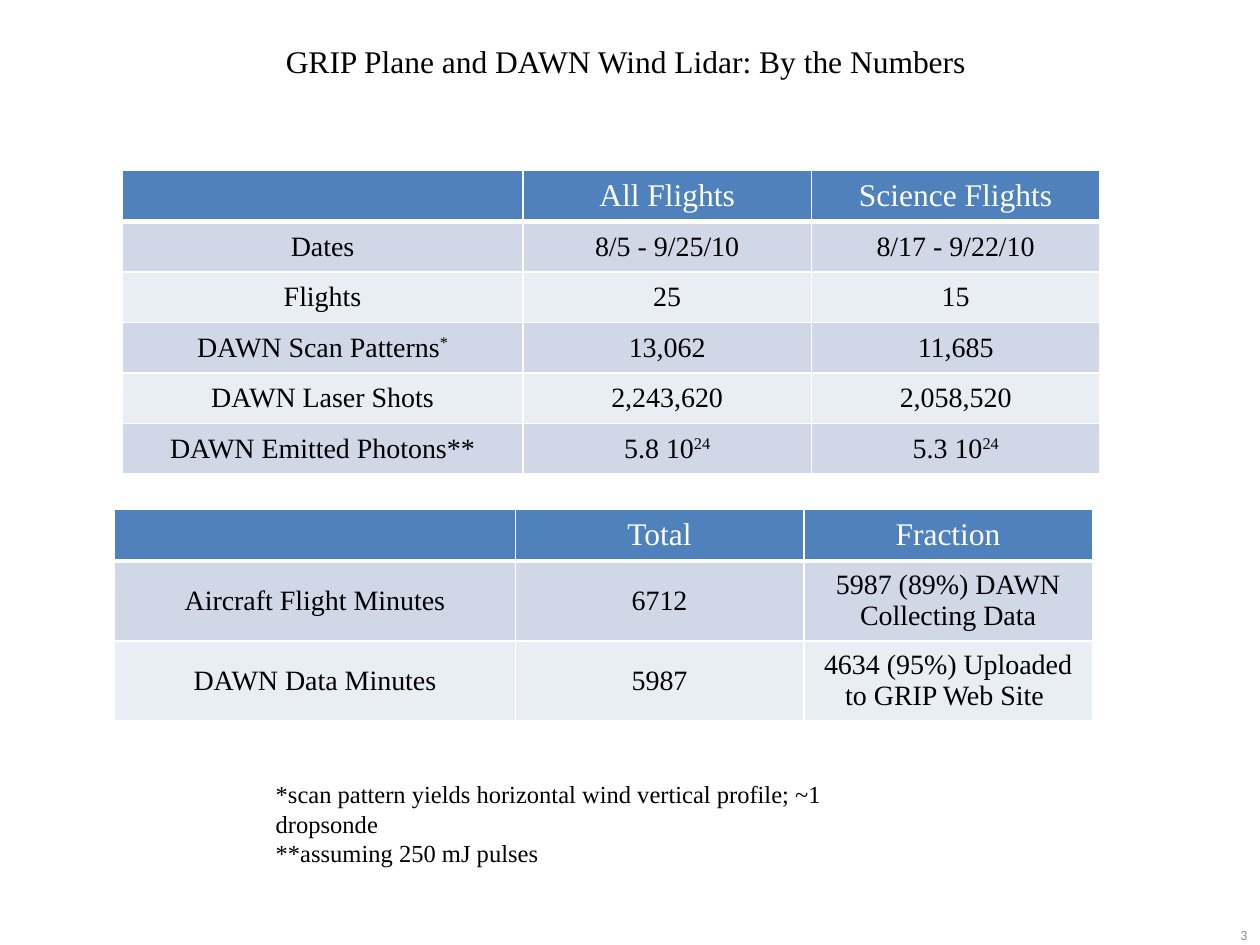
import pptx
import pptx.dml.color
import pptx.enum.text
import pptx.oxml
import pptx.oxml.ns
import pptx.util

WIDTH, HEIGHT = 10, 7.5
SERIF = "Times New Roman"
COLORS = {
    "header": "4F81BD",
    "band_dark": "D0D8E8",
    "band_light": "E9EDF4",
    "white": "FFFFFF",
    "text": "000000",
    "number": "8C8C8C",
}
COLUMN_WIDTHS = [3.18, 2.29, 2.29]
HEADER_HEIGHT = 0.41
ALIGN = pptx.enum.text.PP_ALIGN
MIDDLE = pptx.enum.text.MSO_ANCHOR.MIDDLE

FLIGHT_ROWS = [
    ["", "All Flights", "Science Flights"],
    ["Dates", "8/5 - 9/25/10", "8/17 - 9/22/10"],
    ["Flights", "25", "15"],
    ["DAWN Scan Patterns^*", "13,062", "11,685"],
    ["DAWN Laser Shots", "2,243,620", "2,058,520"],
    ["DAWN Emitted Photons**", "5.8 10^24", "5.3 10^24"],
]
MINUTE_ROWS = [
    ["", "Total", "Fraction"],
    ["Aircraft Flight Minutes", "6712", "5987 (89%) DAWN Collecting Data"],
    ["DAWN Data Minutes", "5987", "4634 (95%) Uploaded to GRIP Web Site "],
]


def rgb(name):
    return pptx.dml.color.RGBColor.from_string(COLORS[name])


def inches(*values):
    return [pptx.util.Inches(value) for value in values]


def style_font(font, size, color, name=SERIF):
    font.name = name
    font.size = pptx.util.Pt(size)
    font.color.rgb = rgb(color)


def add_text(slide, box, lines, size, color="text", name=SERIF, wrap=True):
    """Add a text box; box holds left, top, width and height as shares of the slide."""
    left, top, width, height = box
    shape = slide.shapes.add_textbox(
        *inches(left * WIDTH, top * HEIGHT, width * WIDTH, height * HEIGHT))
    frame = shape.text_frame
    frame.word_wrap = wrap
    frame.text = "\n".join(lines)
    for paragraph in frame.paragraphs:
        for run in paragraph.runs:
            style_font(run.font, size, color, name)
    return frame


def set_borders(cell, bottom_width):
    """Draw white cell borders, which must stand before the fill in the XML."""
    properties = cell._tc.get_or_add_tcPr()
    sides = [("lnL", 1), ("lnR", 1), ("lnT", 1), ("lnB", bottom_width)]
    for position, (tag, width) in enumerate(sides):
        line = pptx.oxml.parse_xml(
            f'<a:{tag} {pptx.oxml.ns.nsdecls("a")} w="{pptx.util.Pt(width)}">'
            f'<a:solidFill><a:srgbClr val="{COLORS["white"]}"/></a:solidFill>'
            f'</a:{tag}>')
        properties.insert(position, line)


def fill_cell(cell, text, fill, size, color, bottom_width):
    """Write a cell; whatever follows ^ in the text is raised."""
    cell.fill.solid()
    cell.fill.fore_color.rgb = rgb(fill)
    set_borders(cell, bottom_width)
    cell.vertical_anchor = MIDDLE
    paragraph = cell.text_frame.paragraphs[0]
    paragraph.alignment = ALIGN.CENTER
    if not text:
        return
    for index, part in enumerate(text.split("^")):
        run = paragraph.add_run()
        run.text = part
        style_font(run.font, size, color)
        if index:
            run._r.get_or_add_rPr().set("baseline", "30000")


def add_banded_table(slide, left, top, rows, row_heights):
    frame = slide.shapes.add_table(
        len(rows), len(COLUMN_WIDTHS),
        *inches(left * WIDTH, top * HEIGHT, sum(COLUMN_WIDTHS), sum(row_heights)))
    table = frame.table
    for column, width in zip(table.columns, COLUMN_WIDTHS):
        column.width = pptx.util.Inches(width)
    for row_index, (texts, height) in enumerate(zip(rows, row_heights)):
        table.rows[row_index].height = pptx.util.Inches(height)
        if row_index == 0:
            look = ("header", 18, "white", 3)
        else:
            look = ("band_dark" if row_index % 2 else "band_light", 16, "text", 1)
        for column_index, text in enumerate(texts):
            fill_cell(table.cell(row_index, column_index), text, *look)


def main():
    presentation = pptx.Presentation()
    presentation.slide_width, presentation.slide_height = inches(WIDTH, HEIGHT)
    slide = presentation.slides.add_slide(presentation.slide_layouts[6])

    add_banded_table(slide, 0.097, 0.18, FLIGHT_ROWS, [HEADER_HEIGHT] + [0.4] * 5)
    title = add_text(slide, (0.217, 0.018, 0.566, 0.075),
                     ["GRIP Plane and DAWN Wind Lidar: By the Numbers"], 18, wrap=False)
    title.paragraphs[0].line_spacing = 1.5
    add_text(slide, (0.209, 0.818, 0.53, 0.076),
             ["*scan pattern yields horizontal wind vertical profile; ~1 dropsonde",
              "**assuming 250 mJ pulses"], 14)
    add_banded_table(slide, 0.091, 0.539, MINUTE_ROWS, [HEADER_HEIGHT, 0.63, 0.63])

    number = add_text(slide, (0.767, 0.979, 0.233, 0.021), ["3"], 8, "number", "Calibri")
    number.margin_top = number.margin_bottom = 0
    number.vertical_anchor = MIDDLE
    number.paragraphs[0].alignment = ALIGN.RIGHT

    presentation.save("out.pptx")


if __name__ == "__main__":
    main()
